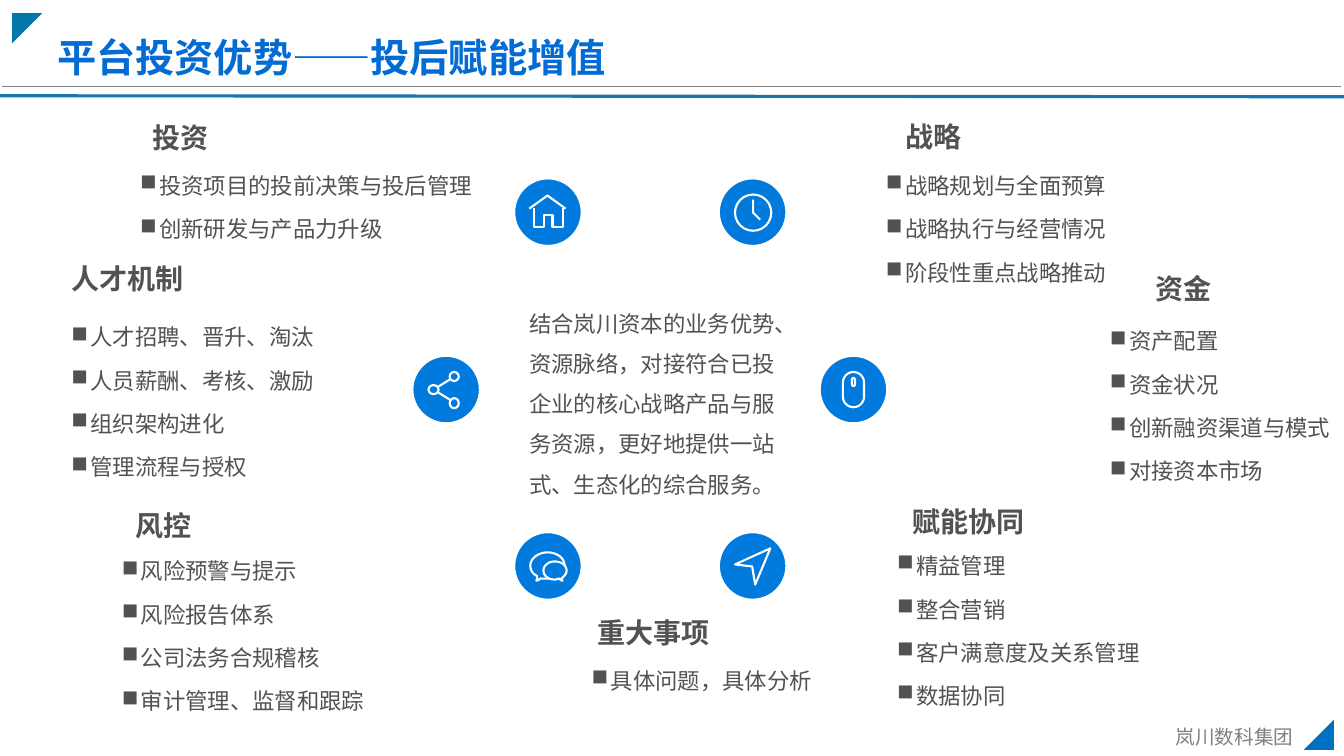
from dataclasses import dataclass
from typing import Callable

from lxml import etree
from pptx import Presentation
from pptx.dml.color import RGBColor
from pptx.enum.shapes import MSO_CONNECTOR, MSO_SHAPE
from pptx.enum.text import MSO_AUTO_SIZE, PP_ALIGN
from pptx.oxml.ns import qn
from pptx.util import Pt

PX = 9144  # one px is 1/100 inch
FONT = "Noto Sans CJK SC"
GREY, TITLE_BLUE, ICON_BLUE, WHITE = "525252", "026CD4", "007ADD", "FFFFFF"
OVAL, PILL, CORNER = MSO_SHAPE.OVAL, MSO_SHAPE.ROUNDED_RECTANGLE, MSO_SHAPE.RIGHT_TRIANGLE
STRAIGHT = MSO_CONNECTOR.STRAIGHT
GROW = MSO_AUTO_SIZE.SHAPE_TO_FIT_TEXT
LEFT, RIGHT, JUSTIFY = PP_ALIGN.LEFT, PP_ALIGN.RIGHT, PP_ALIGN.JUSTIFY
DISC, INDENT = 67, 19

Box = tuple[int, int, int, int]
Point = tuple[float, float]


@dataclass
class Topic:
    heading: str
    heading_box: Box
    points_box: Box
    points: list[str]
    align: PP_ALIGN = LEFT


@dataclass
class Icon:
    left: int
    top: int
    draw: Callable


TOPICS = [
    Topic("投资", (141, 115, 110, 44), (129, 158, 401, 89),
          ["投资项目的投前决策与投后管理", "创新研发与产品力升级"]),
    Topic("风控", (125, 500, 101, 44), (111, 540, 314, 175),
          ["风险预警与提示", "风险报告体系", "公司法务合规稽核", "审计管理、监督和跟踪"]),
    Topic("人才机制", (61, 255, 135, 44), (61, 308, 314, 175),
          ["人才招聘、晋升、淘汰", "人员薪酬、考核、激励", "组织架构进化", "管理流程与授权"]),
    Topic("战略", (888, 114, 85, 44), (846, 158, 261, 132),
          ["战略规划与全面预算", "战略执行与经营情况", "阶段性重点战略推动"], RIGHT),
    Topic("赋能协同", (895, 496, 157, 44), (880, 535, 314, 175),
          ["精益管理", "整合营销", "客户满意度及关系管理", "数据协同"], JUSTIFY),
    Topic("资金", (1136, 264, 98, 44), (1091, 312, 242, 175),
          ["资产配置", "资金状况", "创新融资渠道与模式", "对接资本市场"], JUSTIFY),
    Topic("重大事项", (583, 606, 133, 44), (577, 649, 261, 45), ["具体问题，具体分析"]),
]


def rgb(colour: str) -> RGBColor:
    return RGBColor.from_string(colour)


def add_text(box: Box, lines: list[str], size: int, colour: str = GREY, bold: bool = False,
             spacing: float = 1.0, align: PP_ALIGN = LEFT, bullet: str = "", wrap: bool = True):
    frame = slide.shapes.add_textbox(*(v * PX for v in box)).text_frame
    frame.word_wrap = wrap
    frame.auto_size = GROW
    frame.text = "\n".join(lines)
    for number, paragraph in enumerate(frame.paragraphs):
        if bullet:
            props = paragraph._p.get_or_add_pPr()
            props.set("marL", str(INDENT * PX))
            props.set("indent", str(-INDENT * PX))
            etree.SubElement(props, qn("a:buChar")).set("char", bullet)
        paragraph.alignment = align
        paragraph.line_spacing = spacing
        paragraph.space_before = Pt(6 if number else 0)
        for run in paragraph.runs:
            run.font.size, run.font.bold, run.font.name = Pt(size), bold, FONT
            run.font.color.rgb = rgb(colour)
            east_asian = etree.SubElement(run._r.get_or_add_rPr(), qn("a:ea"))
            east_asian.set("typeface", FONT)


def add_line(shapes, start: Point, end: Point, colour: str, width: float):
    line = shapes.add_connector(STRAIGHT, *(round(v * PX) for v in (*start, *end)))
    line.line.color.rgb = rgb(colour)
    line.line.width = Pt(width)
    etree.SubElement(line._element.spPr, qn("a:effectLst"))


def paint_icon(shape):
    shape.shadow.inherit = False
    shape.fill.solid()
    shape.fill.fore_color.rgb = rgb(ICON_BLUE)
    shape.line.color.rgb = rgb(WHITE)
    shape.line.width = Pt(1.5)


def add_part(shapes, kind: MSO_SHAPE, box: Box):
    part = shapes.add_shape(kind, *(v * PX for v in box))
    if kind == PILL:
        part.adjustments[0] = 0.5
    paint_icon(part)


def add_outline(shapes, points: list[Point], close: bool = False):
    first, *rest = [(round(x * PX), round(y * PX)) for x, y in points]
    builder = shapes.build_freeform(*first)
    builder.add_line_segments(rest, close=close)
    paint_icon(builder.convert_to_shape())


def curve(knots: list[Point], steps: int = 8) -> list[Point]:
    """Points along joined cubic Bezier curves."""
    points = [knots[0]]
    for i in range(0, len(knots) - 1, 3):
        for step in range(1, steps + 1):
            t = step / steps
            weights = ((1 - t) ** 3, 3 * t * (1 - t) ** 2, 3 * t * t * (1 - t), t ** 3)
            points.append(tuple(sum(w * k[axis] for w, k in zip(weights, knots[i:i + 4]))
                                for axis in (0, 1)))
    return points


# Icon drawings, in slide px
def draw_clock(shapes):
    add_part(shapes, OVAL, (729, 193, 36, 36))
    add_outline(shapes, [(747, 198), (747, 211), (754, 218)])


def draw_house(shapes):
    add_outline(shapes, [(561, 207), (543, 194), (525, 207)])
    add_outline(shapes, [(558, 206), (558, 225), (548, 225), (548, 213),
                         (540, 213), (540, 225), (530, 225), (530, 206)])


def draw_share(shapes):
    for node in ((446, 369, 9, 9), (425, 382, 10, 9), (446, 395, 9, 10)):
        add_part(shapes, OVAL, node)
    add_line(shapes, (434, 389), (447, 397), WHITE, 1.5)
    add_line(shapes, (434, 384), (447, 376), WHITE, 1.5)


def draw_mouse(shapes):
    add_part(shapes, PILL, (836, 369, 21, 35))
    add_part(shapes, PILL, (845, 375, 3, 8))


def draw_plane(shapes):
    add_outline(shapes, [(749, 580), (764, 544), (729, 560), (746, 562), (749, 580)], close=True)


def draw_chat(shapes):
    add_outline(shapes, curve([
        (546, 574), (545, 574), (544, 574), (543, 574), (541, 574), (539, 574), (537, 574),
        (536, 573), (535, 576), (532, 576), (532, 576), (534, 572), (532, 571),
        (528, 569), (526, 565), (526, 561), (526, 554), (534, 548), (543, 548),
        (553, 548), (560, 554), (560, 561)]))
    add_outline(shapes, curve([
        (539, 566), (539, 571), (544, 575), (550, 575), (552, 575), (553, 574), (555, 574),
        (555, 574), (556, 576), (558, 576), (558, 576), (556, 574), (558, 573),
        (560, 571), (562, 569), (562, 566), (562, 561), (557, 557), (550, 557),
        (544, 557), (539, 561), (539, 566)]), close=True)


ICONS = [Icon(713, 177, draw_clock), Icon(510, 177, draw_house), Icon(409, 353, draw_share),
         Icon(813, 353, draw_mouse), Icon(713, 528, draw_plane), Icon(510, 528, draw_chat)]

deck = Presentation()
deck.slide_width, deck.slide_height = 1333 * PX, 750 * PX
slide = deck.slides.add_slide(deck.slide_layouts[6])

# Frame: rules and corner triangles
add_line(slide.shapes, (0, 95), (1333, 96), "1A73B3", 2.25)
for left, top, turn, colour in ((12, 13, 90, "0176AB"), (1293, 714, 270, "0070C0")):
    corner = slide.shapes.add_shape(CORNER, left * PX, top * PX, 30 * PX, 30 * PX)
    corner.rotation = turn
    corner.shadow.inherit = False
    corner.fill.solid()
    corner.fill.fore_color.rgb = rgb(colour)
    corner.line.fill.background()
add_line(slide.shapes, (2, 86), (1330, 86), "808080", 1)

# Footer and title
add_text((1156, 714, 138, 34), ["岚川数科集团"], 14, "808080", wrap=False)
add_text((47, 28, 821, 57), ["平台投资优势——投后赋能增值"], 28, TITLE_BLUE, bold=True)

# Topics around the ring
for topic in TOPICS:
    add_text(topic.points_box, topic.points, 16, spacing=1.3, align=topic.align, bullet="■")
    add_text(topic.heading_box, [topic.heading], 20, bold=True)

# Ring of icons
for icon in ICONS:
    ring_shapes = slide.shapes.add_group_shape().shapes
    add_part(ring_shapes, OVAL, (icon.left, icon.top, DISC, DISC))
    icon.draw(ring_shapes)

# Central statement
add_text((515, 289, 284, 212),
         ["结合岚川资本的业务优势、资源脉络，对接符合已投企业的核心战略产品与服务资源，"
          "更好地提供一站式、生态化的综合服务。"], 16, spacing=1.5)

deck.save("out.pptx")
